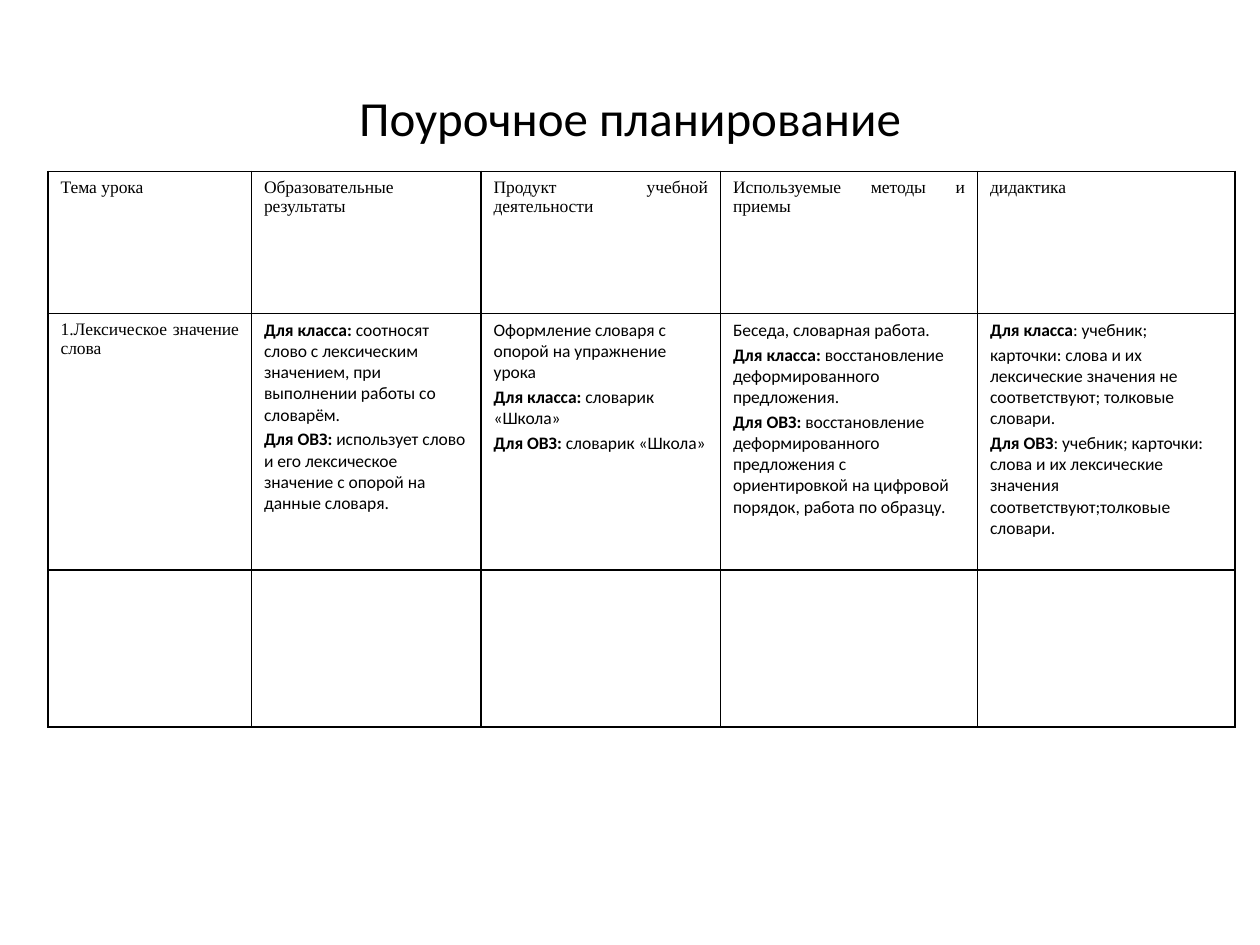
"""Builds a lesson planning slide with a title and a bordered table."""
from lxml.etree import SubElement
from pptx import Presentation
from pptx.dml.color import RGBColor
from pptx.enum.text import MSO_ANCHOR, PP_ALIGN
from pptx.oxml.ns import qn
from pptx.util import Pt

TITLE = "Поурочное планирование"
HEADS = ["Тема урока", "Образовательные результаты", "Продукт учебной деятельности",
         "Используемые методы и приемы", "дидактика"]
TOPIC = "1.Лексическое значение слова"
PLANS = [
    [("Для класса: ", "соотносят слово с лексическим значением, при выполнении работы со словарём."),
     ("Для ОВЗ: ", "использует слово и его лексическое значение с опорой на данные словаря.")],
    [("", "Оформление словаря с опорой на упражнение урока"),
     ("Для класса: ", "словарик «Школа»"),
     ("Для ОВЗ: ", "словарик «Школа»")],
    [("", "Беседа, словарная работа."),
     ("Для класса:", " восстановление деформированного предложения."),
     ("Для ОВЗ: ", "восстановление деформированного предложения с ориентировкой "
                   "на цифровой порядок, работа по образцу.")],
    [("Для класса", ": учебник;"),
     ("", "карточки: слова и их лексические значения не соответствуют; толковые словари."),
     ("Для ОВЗ", ": учебник; карточки: слова и их лексические значения "
                 "соответствуют;толковые словари.")],
]
WIDTHS = [116.3, 131.2, 136.8, 146.9, 147.2]
HEIGHTS = [81.2, 146.5, 89.8]
INK = "000000"


def color(code):
    """Turn a hex string into a colour."""
    return RGBColor.from_string(code)


def style(para, face, size, align):
    """Set the font and alignment of a paragraph."""
    para.alignment = align
    para.font.name, para.font.size = face, Pt(size)
    para.font.color.rgb = color(INK)


def border(cell):
    """Draw a thin line on all four sides of a cell."""
    props = cell._tc.get_or_add_tcPr()
    for side in ("a:lnL", "a:lnR", "a:lnT", "a:lnB"):
        line = SubElement(props, qn(side), w=str(Pt(1)))
        fill = SubElement(line, qn("a:solidFill"))
        SubElement(fill, qn("a:srgbClr"), val=INK)


def label(cell, text):
    """Write one justified serif paragraph."""
    para = cell.text_frame.paragraphs[0]
    para.text = text
    style(para, "Times New Roman", 10, PP_ALIGN.JUSTIFY)


def fill_plan(cell, items):
    """Write paragraphs that open with a bold lead."""
    frame = cell.text_frame
    for i, (lead, rest) in enumerate(items):
        para = frame.add_paragraph() if i else frame.paragraphs[0]
        style(para, "Calibri", 10, PP_ALIGN.LEFT)
        para.space_before = Pt(2)
        if lead:
            run = para.add_run()
            run.text, run.font.bold = lead, True
        para.add_run().text = rest


def main():
    """Build and save the slide."""
    deck = Presentation()
    deck.slide_width, deck.slide_height = Pt(720), Pt(540)
    slide = deck.slides.add_slide(deck.slide_layouts[6])

    frame = slide.shapes.add_textbox(Pt(36), Pt(21.6), Pt(648), Pt(90)).text_frame
    frame.word_wrap = True
    frame.vertical_anchor = MSO_ANCHOR.MIDDLE
    frame.text = TITLE
    style(frame.paragraphs[0], "Calibri", 28, PP_ALIGN.CENTER)

    table = slide.shapes.add_table(len(HEIGHTS), len(WIDTHS), Pt(27.4), Pt(97.9),
                                   Pt(sum(WIDTHS)), Pt(sum(HEIGHTS))).table
    table.first_row = table.horz_banding = False
    for col, width in zip(table.columns, WIDTHS):
        col.width = Pt(width)
    for row, height in zip(table.rows, HEIGHTS):
        row.height = Pt(height)
    for cell in table.iter_cells():
        border(cell)
        cell.fill.background()

    for i, head in enumerate(HEADS):
        label(table.cell(0, i), head)
    label(table.cell(1, 0), TOPIC)
    for i, items in enumerate(PLANS, 1):
        fill_plan(table.cell(1, i), items)
    deck.save("out.pptx")


if __name__ == "__main__":
    main()
